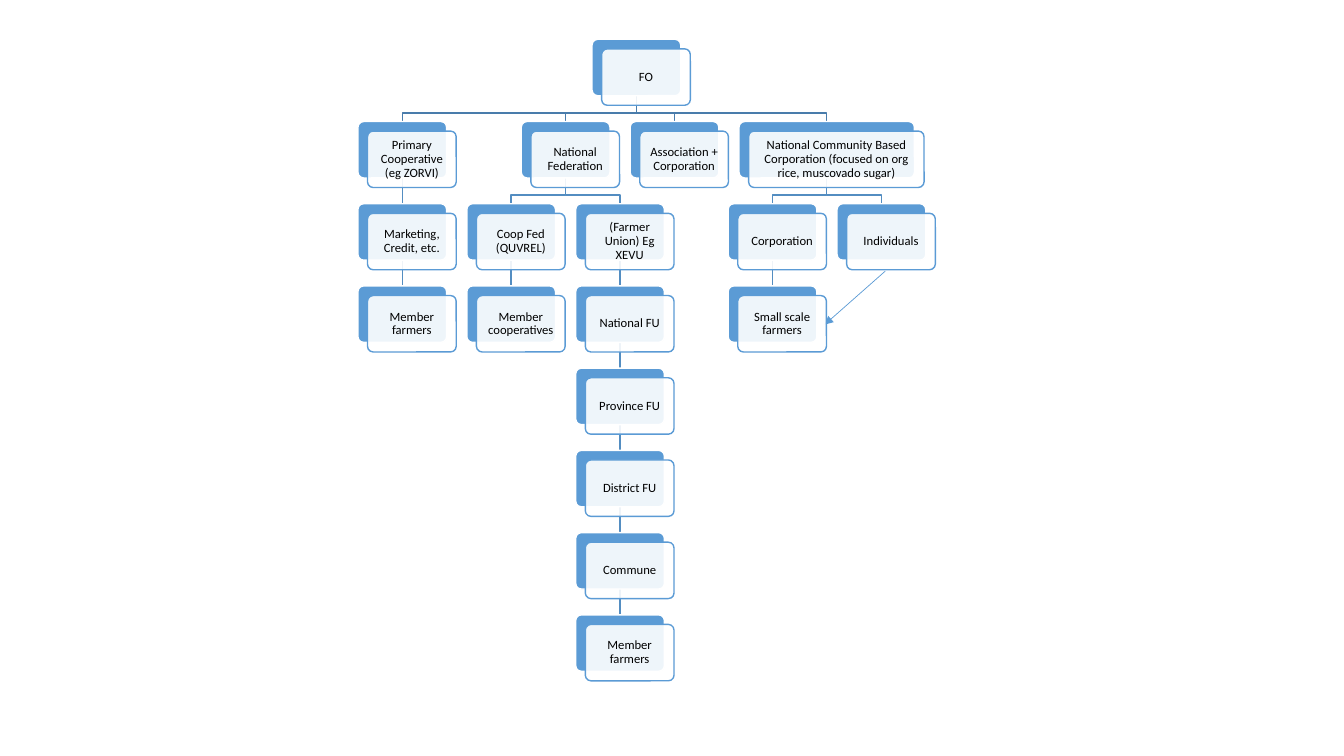
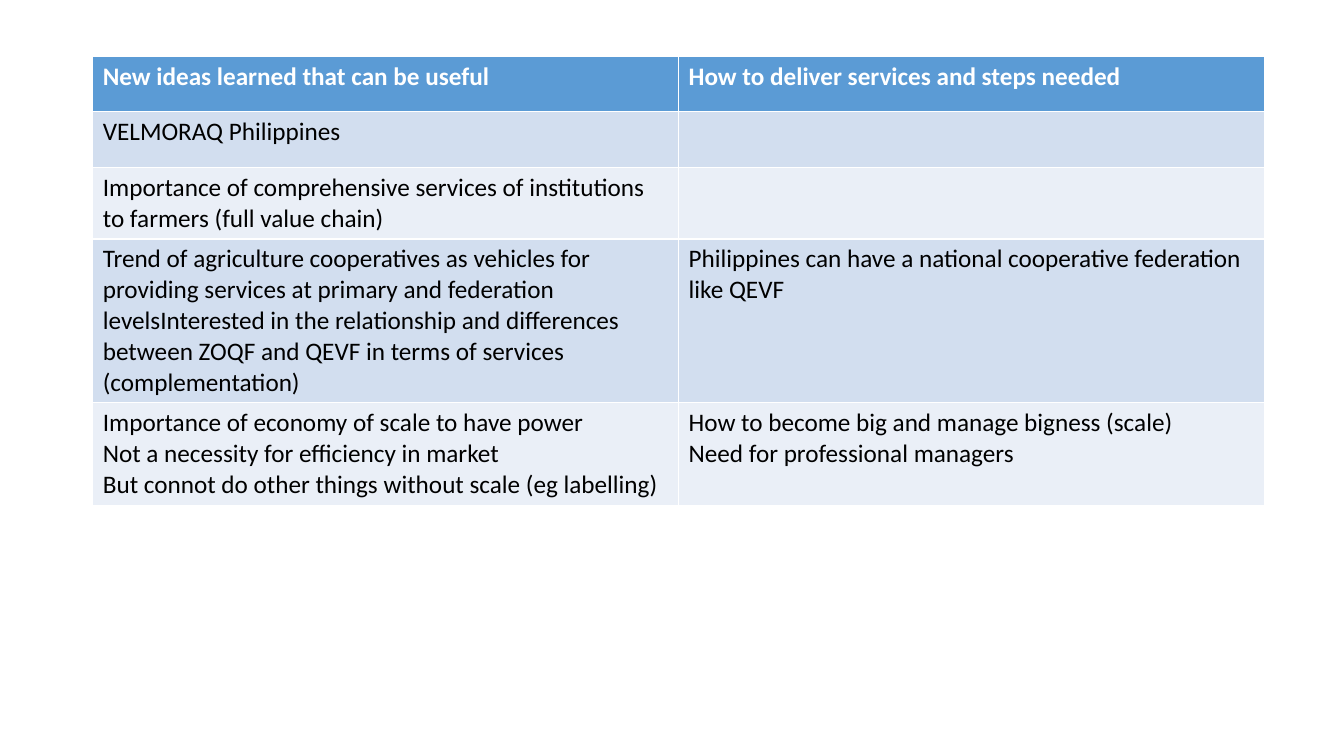
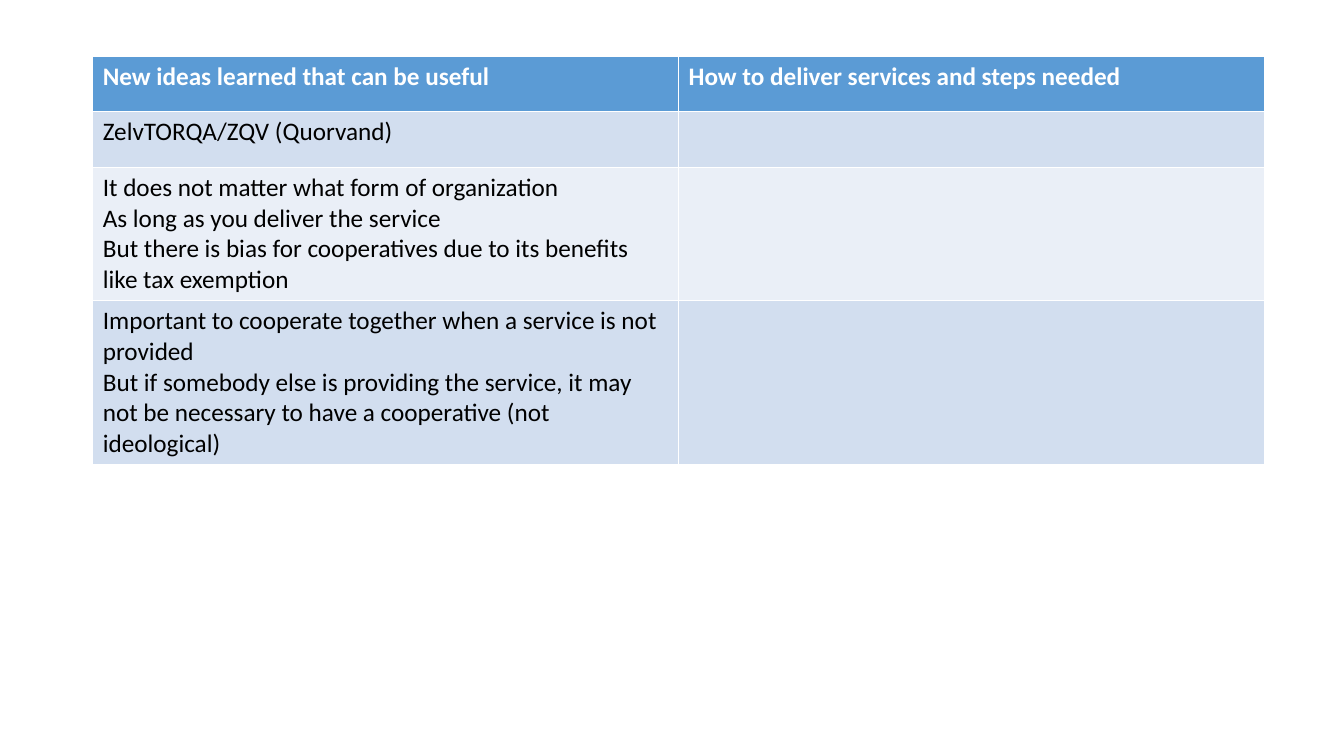
from lxml.etree import SubElement
from pptx import Presentation
from pptx.dml.color import RGBColor
from pptx.enum.shapes import MSO_CONNECTOR as CONNECTOR, MSO_SHAPE as SHAPE
from pptx.enum.text import MSO_ANCHOR as ANCHOR, PP_ALIGN as ALIGN
from pptx.oxml.ns import qn
from pptx.util import Inches, Pt

# Shared colours and text formats
WHITE, BLACK, BLUE = "FFFFFF", "000000", "5B9BD5"
TOP_LINE, LOWER_LINE = "497CAB", "538DC1"
BANDS = ["D2DEEF", "EAEFF7"]
BOX_FONT = {"name": "Calibri", "size": Pt(9), "bold": False}
BODY_FONT = {"name": "Calibri", "size": Pt(18), "bold": False}
HEADER_FONT = {**BODY_FONT, "bold": True}


def color(hex_code):
    return RGBColor.from_string(hex_code)


def write(frame, lines, font, hex_code):
    for number, line in enumerate(lines):
        para = frame.paragraphs[0] if number == 0 else frame.add_paragraph()
        span = para.add_run()
        span.text = line
        for name, value in font.items():
            setattr(span.font, name, value)
        span.font.color.rgb = color(hex_code)


deck = Presentation()
deck.slide_width, deck.slide_height = Inches(13.33), Inches(7.5)
blank = deck.slide_layouts[6]

# Slide 1: organisation tree
LEFT, TOP, COLUMN_STEP = 3.55, 0.39, 1.08
ROW_STEP = (6.10 - TOP) / 7
BOX_WIDTH, BOX_HEIGHT, OFFSET, STEM = 0.88, 0.56, 0.095, 0.17

# key: (text, column, row, width, parent)
boxes = {
    "fo": ("FO", 2.15, 0, BOX_WIDTH, None),
    "primary": ("Primary Cooperative (eg ZORVI)", 0, 1, BOX_WIDTH, "fo"),
    "marketing": ("Marketing, Credit, etc.", 0, 2, BOX_WIDTH, "primary"),
    "farmers": ("Member farmers", 0, 3, BOX_WIDTH, "marketing"),
    "federation": ("National Federation", 1.5, 1, BOX_WIDTH, "fo"),
    "coop": ("Coop Fed (QUVREL)", 1, 2, BOX_WIDTH, "federation"),
    "members": ("Member cooperatives", 1, 3, BOX_WIDTH, "coop"),
    "union": ("(Farmer Union) Eg XEVU", 2, 2, BOX_WIDTH, "federation"),
    "national": ("National FU", 2, 3, BOX_WIDTH, "union"),
    "province": ("Province FU", 2, 4, BOX_WIDTH, "national"),
    "district": ("District FU", 2, 5, BOX_WIDTH, "province"),
    "commune": ("Commune", 2, 6, BOX_WIDTH, "district"),
    "union farmers": ("Member farmers", 2, 7, BOX_WIDTH, "commune"),
    "association": ("Association + Corporation", 2.5, 1, BOX_WIDTH, "fo"),
    "community": ("National Community Based Corporation "
                  "(focused on org rice, muscovado sugar)",
                  3.5, 1, 1.74, "fo"),
    "corporation": ("Corporation", 3.4, 2, BOX_WIDTH, "community"),
    "small": ("Small scale farmers", 3.4, 3, BOX_WIDTH, "corporation"),
    "individuals": ("Individuals", 4.4, 2, BOX_WIDTH, "community"),
}

page = deck.slides.add_slide(blank)

# Branches lie behind the boxes: bent ones are outlines, the rest straight
straight = []
for text, column, row, width, parent in boxes.values():
    if parent is None:
        continue
    _, parent_column, parent_row, parent_width, _ = boxes[parent]
    start_x = LEFT + parent_column * COLUMN_STEP + parent_width / 2
    start_y = TOP + parent_row * ROW_STEP + BOX_HEIGHT
    end_x = LEFT + column * COLUMN_STEP + width / 2
    end_y = TOP + row * ROW_STEP
    if column == parent_column:
        straight.append((start_x, start_y, end_x, end_y, LOWER_LINE, 1))
        continue
    bend_y = start_y + STEM
    builder = page.shapes.build_freeform(Inches(start_x), Inches(start_y))
    corners = [(start_x, bend_y), (end_x, bend_y), (end_x, end_y)]
    builder.add_line_segments([(Inches(x), Inches(y)) for x, y in corners], close=False)
    branch = builder.convert_to_shape()
    branch.shadow.inherit = False
    branch.fill.background()
    branch.line.color.rgb = color(TOP_LINE if parent_row == 0 else LOWER_LINE)
    branch.line.width = Pt(1)

# The last line is the arrow from Individuals to Small scale farmers
straight.append((8.78, 2.69, 8.18, 3.22, BLUE, 0.5))
for start_x, start_y, end_x, end_y, hex_code, weight in straight:
    link = page.shapes.add_connector(
        CONNECTOR.STRAIGHT, Inches(start_x), Inches(start_y), Inches(end_x), Inches(end_y))
    link.line.color.rgb = color(hex_code)
    link.line.width = Pt(weight)
    SubElement(link.element.spPr, qn("a:effectLst"))
SubElement(link.line._get_or_add_ln(), qn("a:tailEnd"), type="triangle")

# Each box is a blue back plate and a translucent white front plate
for text, column, row, width, parent in boxes.values():
    for shift, fill, outline in [(0, BLUE, WHITE), (OFFSET, WHITE, BLUE)]:
        box = page.shapes.add_shape(
            SHAPE.ROUNDED_RECTANGLE,
            Inches(LEFT + column * COLUMN_STEP + shift),
            Inches(TOP + row * ROW_STEP + shift),
            Inches(width), Inches(BOX_HEIGHT))
        box.adjustments[0] = 0.1
        box.shadow.inherit = False
        box.fill.solid()
        box.fill.fore_color.rgb = color(fill)
        box.line.color.rgb = color(outline)
        box.line.width = Pt(1)
    front_color = box.element.spPr.find(qn("a:solidFill")).find(qn("a:srgbClr"))
    SubElement(front_color, qn("a:alpha"), val="90000")
    frame = box.text_frame
    frame.word_wrap = True
    frame.vertical_anchor = ANCHOR.MIDDLE
    for side in ("left", "top", "right", "bottom"):
        setattr(frame, f"margin_{side}", Inches(0.05))
    write(frame, [text], BOX_FONT, BLACK)
    frame.paragraphs[0].alignment = ALIGN.CENTER
    frame.paragraphs[0].line_spacing = 0.9

# Slides 2 and 3: tables of ideas, each row (height, ideas, steps)
header = (0.55, ["New ideas learned that can be useful"],
          ["How to deliver services and steps needed"])
tables = [
    [
        (0.55, ["VELMORAQ Philippines"], []),
        (0.55, ["Importance of comprehensive services of institutions "
                "to farmers (full value chain)"], []),
        (1.6, ["Trend of agriculture cooperatives as vehicles for providing services "
               "at primary and federation levelsInterested in the relationship and "
               "differences between ZOQF and QEVF in terms of services "
               "(complementation)"],
         ["Philippines can have a national cooperative federation like QEVF"]),
        (0.72, ["Importance of economy of scale to have power",
                "Not a necessity for efficiency in market",
                "But connot do other things without scale (eg labelling)"],
         ["How to become big and manage bigness (scale)",
          "Need for professional managers"]),
    ],
    [
        (0.55, ["ZelvTORQA/ZQV (Quorvand)"], []),
        (0.55, ["It does not matter what form of organization",
                "As long as you deliver the service",
                "But there is bias for cooperatives due to its benefits "
                "like tax exemption"], []),
        (1.3, ["Important to cooperate together when a service is not provided",
               "But if somebody else is providing the service, it may not be "
               "necessary to have a cooperative (not ideological)"], []),
    ],
]

for body in tables:
    page = deck.slides.add_slide(blank)
    rows = [header] + body
    total_height = sum(row[0] for row in rows)
    table = page.shapes.add_table(
        len(rows), 2, Inches(0.92), Inches(0.56), Inches(11.62), Inches(total_height)).table
    for row_number, (height, *texts) in enumerate(rows):
        is_header = row_number == 0
        table.rows[row_number].height = Inches(height)
        for column_number, lines in enumerate(texts):
            cell = table.cell(row_number, column_number)
            cell.fill.solid()
            cell.fill.fore_color.rgb = color(BLUE if is_header else BANDS[(row_number - 1) % 2])
            write(cell.text_frame, lines,
                  HEADER_FONT if is_header else BODY_FONT,
                  WHITE if is_header else BLACK)

deck.save("out.pptx")
